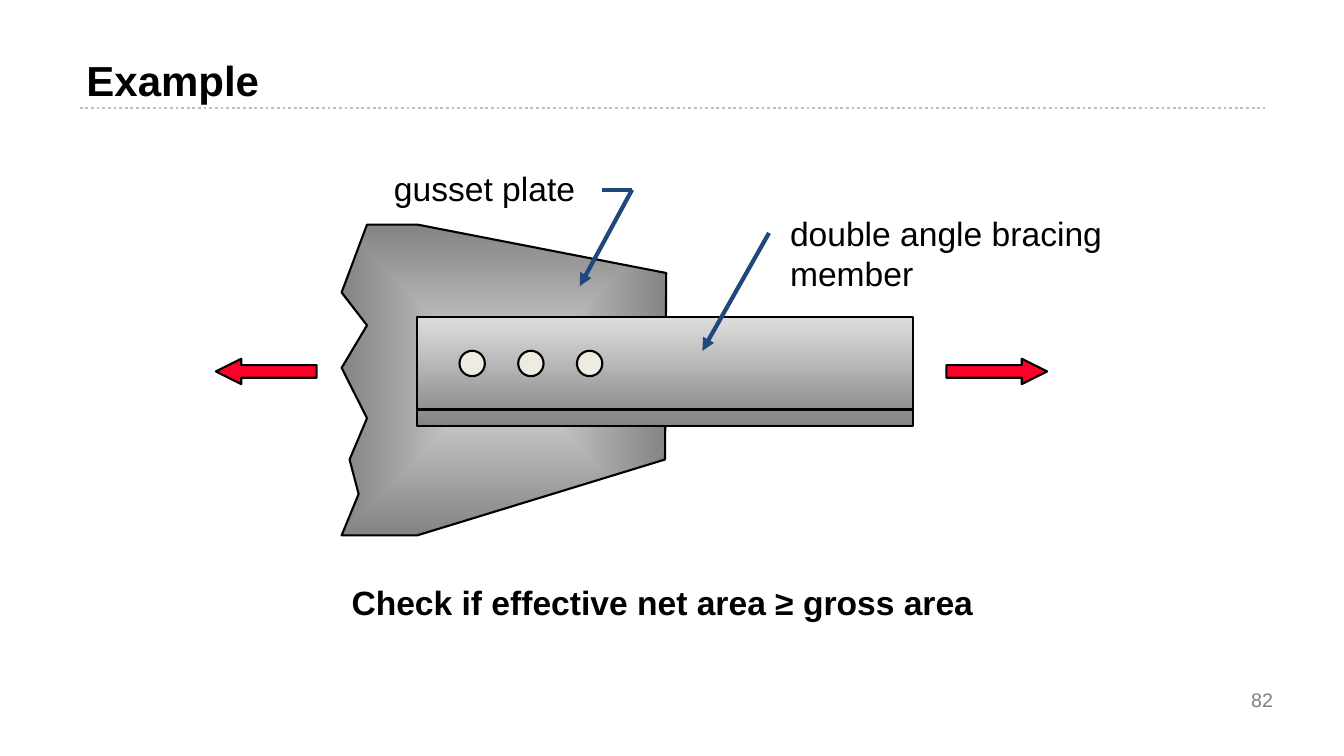
from dataclasses import dataclass

from lxml import etree
from pptx import Presentation, util as u
from pptx.dml import color
from pptx.enum import dml, shapes, text
from pptx.oxml import ns

COLORS = {
    "ink": "000000",
    "rule": "BFBFBF",
    "number": "7F7F7F",
    "force": "FC0128",
    "bolt": "EEECE1",
    "steel_light": "DDDDDD",
    "steel_dark": "848484",
    "leader": "1F497D",
}


@dataclass
class Label:
    wording: str
    left: float
    top: float
    width: float
    height: float
    size: int = 24
    bold: bool = False
    ink: str = "ink"
    align: text.PP_ALIGN = text.PP_ALIGN.LEFT
    anchor: text.MSO_ANCHOR = text.MSO_ANCHOR.TOP


@dataclass
class Stroke:
    start: tuple[float, float]
    end: tuple[float, float]
    ink: str
    weight: float
    arrow: bool = False
    dotted: bool = False


@dataclass
class Part:
    kind: shapes.MSO_SHAPE
    left: float
    top: float
    width: float
    height: float
    fill: str | None = None


LABELS = [
    Label("Example", 1.93, 1.24, 30.4, 1.73, size=30, bold=True),
    Label("82", 24.43, 17.12, 7.9, 1.02, size=14, ink="number",
          align=text.PP_ALIGN.RIGHT, anchor=text.MSO_ANCHOR.MIDDLE),
    Label("double angle bracing member", 19.66, 5.23, 8.76, 2.31),
    Label("gusset plate", 9.68, 4.11, 6.27, 1.27),
    Label("Check if effective net area ≥ gross area", 8.61, 14.55, 16.51, 1.32, bold=True),
]
TITLE_RULE = Stroke((2.01, 2.72), (31.88, 2.72), "rule", 2, dotted=True)
ANGLE_LEG = Stroke((10.52, 10.31), (23.01, 10.31), "ink", 2.25)
LEADERS = [
    Stroke((19.38, 5.87), (17.7, 8.84), "leader", 3, arrow=True),
    Stroke((15.93, 4.78), (14.61, 7.21), "leader", 3, arrow=True),
    Stroke((15.93, 4.78), (15.16, 4.78), "leader", 3),
]
FORCES = [
    Part(shapes.MSO_SHAPE.RIGHT_ARROW, 23.85, 9.04, 2.54, 0.64, "force"),
    Part(shapes.MSO_SHAPE.LEFT_ARROW, 5.44, 9.04, 2.54, 0.64, "force"),
]
BRACING = Part(shapes.MSO_SHAPE.RECTANGLE, 10.52, 8, 12.49, 2.74)
BOLT_PITCH = 1.48
BOLTS = [
    Part(shapes.MSO_SHAPE.OVAL, 11.58 + column * BOLT_PITCH, 8.84, 0.64, 0.64, "bolt")
    for column in range(3)
]
GUSSET_OUTLINE = [
    (10.52, 5.66), (16.79, 6.88), (16.76, 11.58), (10.52, 13.49),
    (8.61, 13.49), (9.04, 12.45), (8.81, 11.58), (9.25, 10.54),
    (8.61, 9.27), (9.25, 8.2), (8.61, 7.37), (9.25, 5.66),
]


def rgb(name: str) -> color.RGBColor:
    return color.RGBColor.from_string(COLORS[name])


def outline(shape) -> None:
    shape.shadow.inherit = False
    shape.line.color.rgb = rgb("ink")
    shape.line.width = u.Pt(1.5)


def fill_steel(shape) -> None:
    shape.fill.gradient()
    shape.fill.gradient_angle = 270
    for stop, shade in zip(shape.fill.gradient_stops, ("steel_light", "steel_dark")):
        stop.color.rgb = rgb(shade)


def radiate_from_centre(shape) -> None:
    linear = shape.element.spPr.find(f".//{ns.qn('a:lin')}")
    gradient = linear.getparent()
    gradient.remove(linear)
    rectangular = etree.SubElement(gradient, ns.qn("a:path"), {"path": "rect"})
    etree.SubElement(rectangular, ns.qn("a:fillToRect"),
                     {side: "50000" for side in "ltrb"})


def draw_part(slide, part: Part):
    shape = slide.shapes.add_shape(part.kind, u.Cm(part.left), u.Cm(part.top),
                                   u.Cm(part.width), u.Cm(part.height))
    outline(shape)
    if part.fill:
        shape.fill.solid()
        shape.fill.fore_color.rgb = rgb(part.fill)
    else:
        fill_steel(shape)
    return shape


def draw_force(slide, force: Part) -> None:
    arrow = draw_part(slide, force)
    arrow.adjustments[0] = 0.5
    arrow.adjustments[1] = 1


def draw_gusset(slide) -> None:
    first, *rest = [(u.Cm(x), u.Cm(y)) for x, y in GUSSET_OUTLINE]
    builder = slide.shapes.build_freeform(*first)
    builder.add_line_segments(rest, close=True)
    gusset = builder.convert_to_shape()
    outline(gusset)
    fill_steel(gusset)
    radiate_from_centre(gusset)


def draw_stroke(slide, stroke: Stroke) -> None:
    line = slide.shapes.add_connector(
        shapes.MSO_CONNECTOR.STRAIGHT,
        *(u.Cm(value) for value in stroke.start + stroke.end))
    line.line.color.rgb = rgb(stroke.ink)
    line.line.width = u.Pt(stroke.weight)
    if stroke.dotted:
        line.line.dash_style = dml.MSO_LINE.ROUND_DOT
    if stroke.arrow:
        etree.SubElement(line.line._get_or_add_ln(), ns.qn("a:tailEnd"),
                         {"type": "triangle"})
    etree.SubElement(line.element.spPr, ns.qn("a:effectLst"))


def draw_label(slide, label: Label) -> None:
    frame = slide.shapes.add_textbox(u.Cm(label.left), u.Cm(label.top),
                                     u.Cm(label.width), u.Cm(label.height)).text_frame
    frame.word_wrap = True
    frame.vertical_anchor = label.anchor
    paragraph = frame.paragraphs[0]
    paragraph.alignment = label.align
    run = paragraph.add_run()
    run.text = label.wording
    run.font.name = "Arial"
    run.font.size = u.Pt(label.size)
    run.font.bold = label.bold
    run.font.color.rgb = rgb(label.ink)


def main() -> None:
    deck = Presentation()
    deck.slide_width, deck.slide_height = u.Cm(33.87), u.Cm(19.05)
    slide = deck.slides.add_slide(deck.slide_layouts[6])
    draw_stroke(slide, TITLE_RULE)
    for force in FORCES:
        draw_force(slide, force)
    draw_gusset(slide)
    draw_part(slide, BRACING)
    draw_stroke(slide, ANGLE_LEG)
    for bolt in BOLTS:
        draw_part(slide, bolt)
    for leader in LEADERS:
        draw_stroke(slide, leader)
    for label in LABELS:
        draw_label(slide, label)
    deck.save("out.pptx")


if __name__ == "__main__":
    main()
